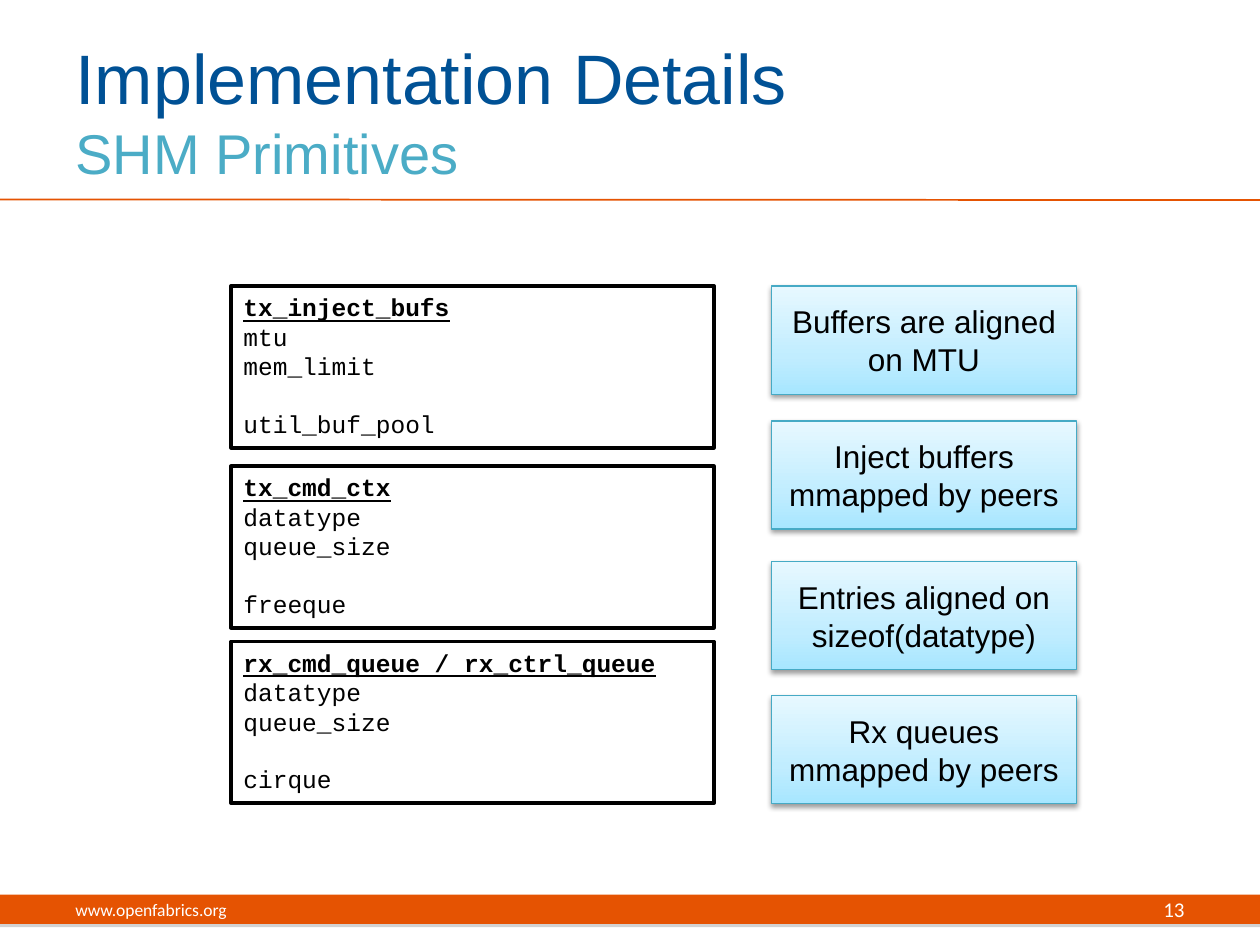
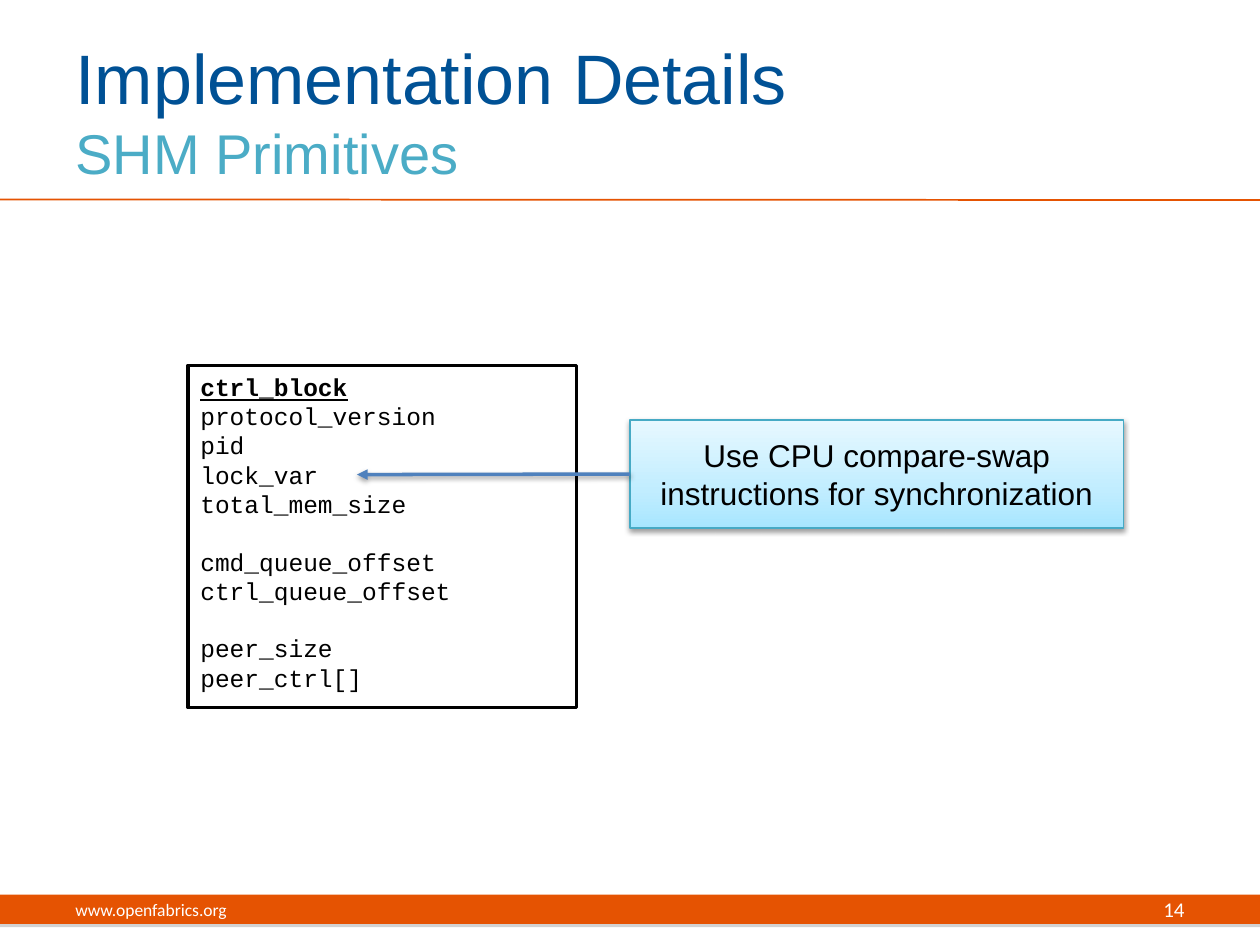
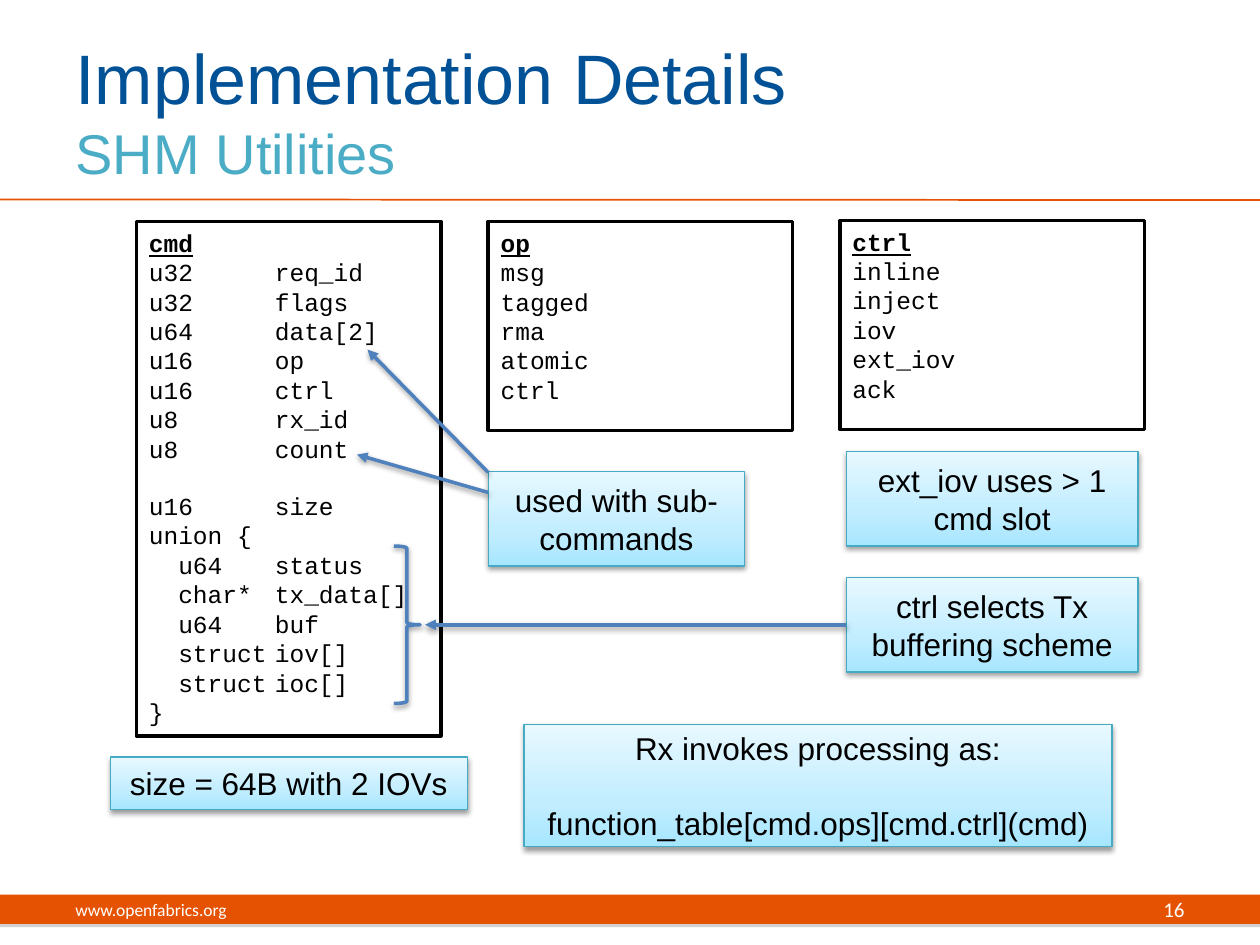
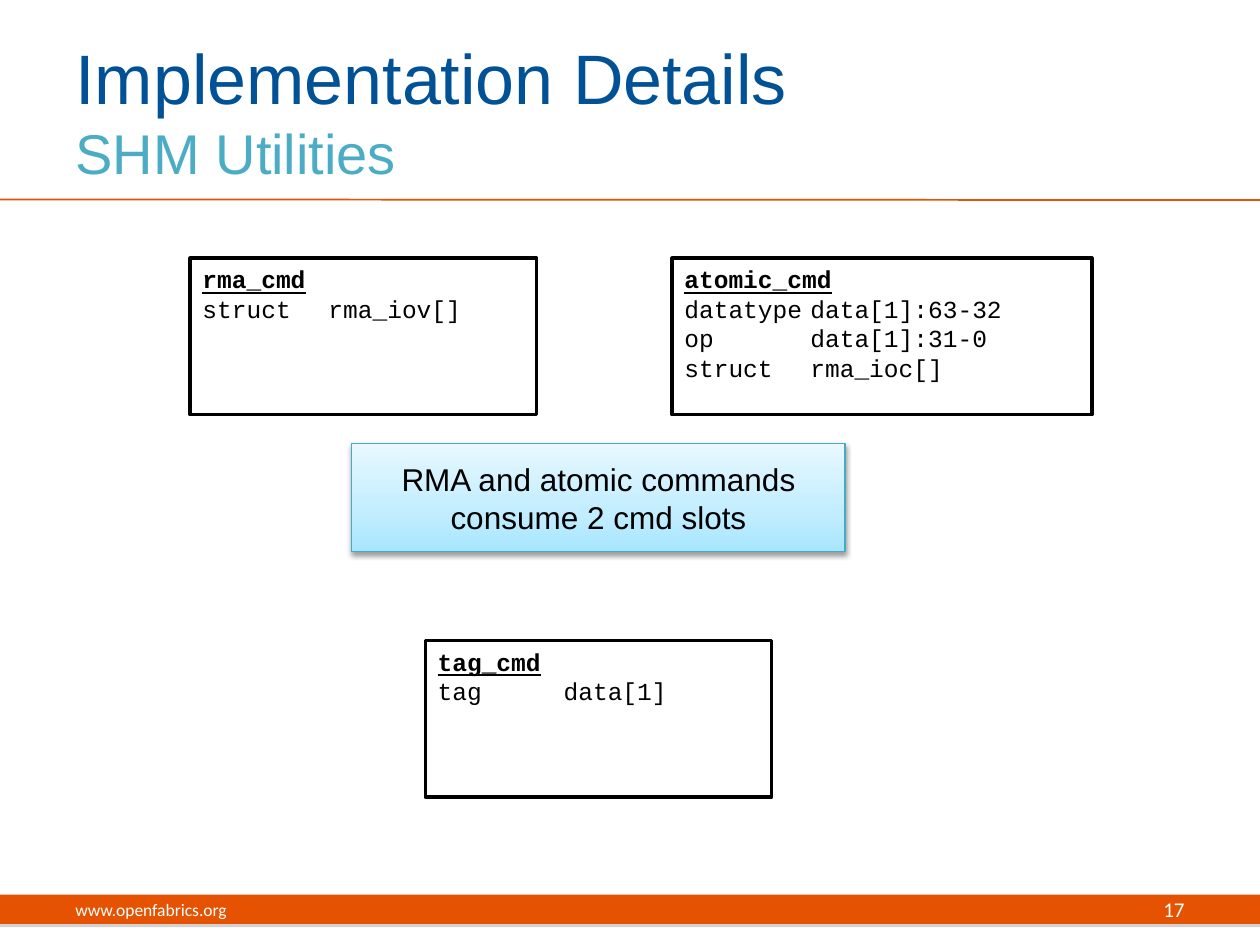
from lxml import etree
from pptx import Presentation
from pptx import util as u
from pptx.dml.color import RGBColor
from pptx.enum import shapes, text
from pptx.oxml.ns import qn

COLUMNS, ROWS = 120, 90
COLORS = {
    "white": "FFFFFF", "black": "000000", "orange": "E55302", "grey": "808080",
    "title": "005195", "subtitle": "4BACC6", "arrow": "4F81BD", "edge": "46AAC5",
}
CALLOUT_STOPS = {0: "A7E6FF", 35: "C1EDFF", 100: "E7F8FF"}
SANS, MONO, FOOTER = "Arial", "Courier New", "Calibri"
CALLOUT_HEIGHT = 10.3


def rgb(name):
    return RGBColor.from_string(COLORS[name])


def add_element(parent, tag, **attributes):
    return etree.SubElement(parent, qn(tag), attributes)


def set_font(font, name, size, color, bold=False, underline=False):
    font.name, font.size, font.color.rgb = name, u.Pt(size), rgb(color)
    font.bold, font.underline = bold, underline


def set_line(line, color, width):
    line.color.rgb, line.width = rgb(color), u.Pt(width)


def add_shadow(properties, color="black", opacity=38, blur=3.1, distance=1.6):
    effects = properties.find(qn("a:effectLst"))
    if effects is None:
        effects = add_element(properties, "a:effectLst")
    shadow = add_element(effects, "a:outerShdw", blurRad=str(u.Pt(blur)),
                         dist=str(u.Pt(distance)), dir="5400000", rotWithShape="0")
    tint = add_element(shadow, "a:srgbClr", val=COLORS[color])
    add_element(tint, "a:alpha", val=str(opacity * 1000))


class Deck:
    """Holds the style and the current slide; lengths are grid columns and rows."""

    def __init__(self):
        self.presentation = Presentation()
        self.presentation.slide_width = u.Inches(10)
        self.presentation.slide_height = u.Inches(7.5)
        self.slide = None

    def x(self, columns):
        return round(self.presentation.slide_width * columns / COLUMNS)

    def y(self, rows):
        return round(self.presentation.slide_height * rows / ROWS)

    def box(self, left, top, width, height):
        return self.x(left), self.y(top), self.x(width), self.y(height)

    def new_slide(self, subtitle, number):
        layout = self.presentation.slide_layouts.get_by_name("Title Only")
        self.slide = self.presentation.slides.add_slide(layout)
        band = self.shape(shapes.MSO_SHAPE.RECTANGLE, (0, 85.2, COLUMNS, 2.8), "orange")
        add_shadow(band._element.spPr, "grey", 35, 0, 1.8)
        self.connector((0, 19), (COLUMNS, 19.05), "orange", 1)
        self.title("Implementation Details", subtitle)
        self.footer((6, 84.2, 38, 4.8), "www.openfabrics.org", 10, text.PP_ALIGN.LEFT)
        self.footer((86, 84.2, 28, 4.8), str(number), 12, text.PP_ALIGN.RIGHT)

    def title(self, heading, subtitle):
        title = self.slide.shapes.title
        title.left, title.top, title.width, title.height = self.box(6, 3, 98, 15)
        title.text_frame.vertical_anchor = text.MSO_ANCHOR.MIDDLE
        paragraph = title.text_frame.paragraphs[0]
        paragraph.alignment = text.PP_ALIGN.LEFT
        paragraph.font.size = u.Pt(40)
        first = paragraph.add_run()
        first.text = heading
        set_font(first.font, SANS, 40, "title")
        paragraph.add_line_break()
        second = paragraph.add_run()
        second.text = subtitle
        set_font(second.font, SANS, 32, "subtitle")

    def footer(self, box, content, size, alignment):
        frame = self.slide.shapes.add_textbox(*self.box(*box)).text_frame
        frame.word_wrap = True
        frame.vertical_anchor = text.MSO_ANCHOR.MIDDLE
        paragraph = frame.paragraphs[0]
        paragraph.text, paragraph.alignment = content, alignment
        set_font(paragraph.font, FOOTER, size, "white")

    def shape(self, kind, box, fill=None, line=None, width=1):
        shape = self.slide.shapes.add_shape(kind, *self.box(*box))
        shape.shadow.inherit = False
        if fill:
            shape.fill.solid()
            shape.fill.fore_color.rgb = rgb(fill)
        else:
            shape.fill.background()
        if line:
            set_line(shape.line, line, width)
        else:
            shape.line.fill.background()
        return shape

    def code(self, box, name, *groups):
        """Framed listing: underlined name, then groups of lines set apart by one line."""
        shape = self.shape(shapes.MSO_SHAPE.RECTANGLE, box, "white", "black", 2)
        frame = shape.text_frame
        frame.word_wrap, frame.vertical_anchor = True, text.MSO_ANCHOR.TOP
        heading = frame.paragraphs[0]
        heading.text, heading.alignment = name, text.PP_ALIGN.LEFT
        set_font(heading.font, MONO, 14, "black", True, True)
        for group_index, group in enumerate(groups):
            for line_index, line in enumerate(group.split("\n")):
                paragraph = frame.add_paragraph()
                paragraph.text, paragraph.alignment = line, text.PP_ALIGN.LEFT
                if group_index and not line_index:
                    paragraph.space_before = u.Pt(16)
                if "\t" in line:
                    tabs = add_element(paragraph._p.get_or_add_pPr(), "a:tabLst")
                    add_element(tabs, "a:tab", pos=str(u.Inches(1)), algn="l")
                set_font(paragraph.font, MONO, 14, "black")

    def callout(self, box, *lines):
        shape = self.shape(shapes.MSO_SHAPE.RECTANGLE, box, None, "edge", 0.75)
        shape.fill.gradient()
        shape.fill.gradient_angle = 90
        stops = shape._element.spPr.find(".//" + qn("a:gsLst"))
        stops.clear()
        for position, color in CALLOUT_STOPS.items():
            stop = add_element(stops, "a:gs", pos=str(position * 1000))
            add_element(stop, "a:srgbClr", val=color)
        add_shadow(shape._element.spPr)
        frame = shape.text_frame
        frame.word_wrap, frame.vertical_anchor = True, text.MSO_ANCHOR.MIDDLE
        for index, line in enumerate(lines):
            paragraph = frame.add_paragraph() if index else frame.paragraphs[0]
            paragraph.text, paragraph.alignment = line, text.PP_ALIGN.CENTER
            if index:
                paragraph.space_before = u.Pt(21)
            set_font(paragraph.font, SANS, 18, "black")
        return shape

    def connector(self, start, end, color, width):
        connector = self.slide.shapes.add_connector(
            shapes.MSO_CONNECTOR.STRAIGHT, self.x(start[0]), self.y(start[1]),
            self.x(end[0]), self.y(end[1]))
        set_line(connector.line, color, width)
        add_element(connector._element.spPr, "a:effectLst")
        return connector

    def arrow(self, start, end, source=None):
        """Arrow to end; a given source is joined at the middle of its left side."""
        connector = self.connector(start, end, "arrow", 2)
        if source is not None:
            connector.begin_connect(source, 1)
        add_element(connector.line._get_or_add_ln(), "a:tailEnd", type="triangle")
        add_shadow(connector._element.spPr)

    def brace(self, box):
        brace = self.shape(shapes.MSO_SHAPE.RIGHT_BRACE, box, None, "arrow", 2)
        add_shadow(brace._element.spPr)


def buffers_and_queues(deck):
    deck.new_slide("SHM Primitives", 13)
    blocks = [
        (27.25, "tx_inject_bufs", "mtu\nmem_limit", "util_buf_pool"),
        (44.4, "tx_cmd_ctx", "datatype\nqueue_size", "freeque"),
        (61.1, "rx_cmd_queue / rx_ctrl_queue", "datatype\nqueue_size", "cirque"),
    ]
    for top, name, *groups in blocks:
        deck.code((22, top, 46, 15.4), name, *groups)
    notes = {
        27.25: "Buffers are aligned on MTU",
        40.1: "Inject buffers mmapped by peers",
        53.5: "Entries aligned on sizeof(datatype)",
        66.25: "Rx queues mmapped by peers",
    }
    for top, note in notes.items():
        deck.callout((73.5, top, 29, CALLOUT_HEIGHT), note)


def control_block(deck):
    deck.new_slide("SHM Primitives", 14)
    deck.code((17.9, 34.8, 37, 32.6), "ctrl_block",
              "protocol_version\npid\nlock_var\ntotal_mem_size",
              "cmd_queue_offset\nctrl_queue_offset", "peer_size\npeer_ctrl[]")
    swap = deck.callout((60, 40, 47, CALLOUT_HEIGHT),
                        "Use CPU compare-swap instructions for synchronization")
    deck.arrow((60, 45.15), (34, 45.2), swap)


def command_layout(deck):
    deck.new_slide("SHM Utilities", 16)
    deck.code((13, 21.1, 29, 49), "cmd",
              "u32\treq_id\nu32\tflags\nu64\tdata[2]\nu16\top\nu16\tctrl\n"
              "u8\trx_id\nu8\tcount",
              "u16\tsize\nunion {\n  u64\tstatus\n  char*\ttx_data[]\n  u64\tbuf\n"
              "  struct\tiov[]\n  struct\tioc[]\n}")
    deck.code((46.5, 21.1, 29, 19.9), "op", "msg\ntagged\nrma\natomic\nctrl")
    deck.code((80, 21, 29, 19.9), "ctrl", "inline\ninject\niov\next_iov\nack")
    deck.callout((49.9, 69, 56, 11.6), "Rx invokes processing as:",
                 "function_table[cmd.ops][cmd.ctrl](cmd)")
    scheme = deck.callout((80.6, 55, 27.8, 9), "ctrl selects Tx buffering scheme")
    deck.callout((80.6, 43, 27.8, 9), "ext_iov uses > 1 cmd slot")
    deck.callout((10.5, 72.1, 34, 5), "size = 64B with 2 IOVs")
    deck.callout((46.5, 44.9, 24.4, 9), "used with sub-commands")
    deck.arrow((46.5, 46.9), (34, 43.3))
    deck.arrow((46.5, 45), (35, 33.3))
    deck.arrow((80.6, 59.5), (40.5, 59.5), scheme)
    deck.brace((37.5, 52, 2.5, 15))


def command_variants(deck):
    deck.new_slide("SHM Utilities", 17)
    deck.code((40.5, 61, 33, 14.9), "tag_cmd", "tag\tdata[1]")
    deck.code((18.1, 24.6, 33, 14.9), "rma_cmd", "struct\trma_iov[]")
    deck.code((64, 24.6, 40, 14.9), "atomic_cmd",
              "datatype\tdata[1]:63-32\nop\tdata[1]:31-0\nstruct\trma_ioc[]")
    deck.callout((33.5, 42.25, 47, CALLOUT_HEIGHT),
                 "RMA and atomic commands consume 2 cmd slots")


def main():
    deck = Deck()
    for build in (buffers_and_queues, control_block, command_layout, command_variants):
        build(deck)
    deck.presentation.save("out.pptx")


if __name__ == "__main__":
    main()
